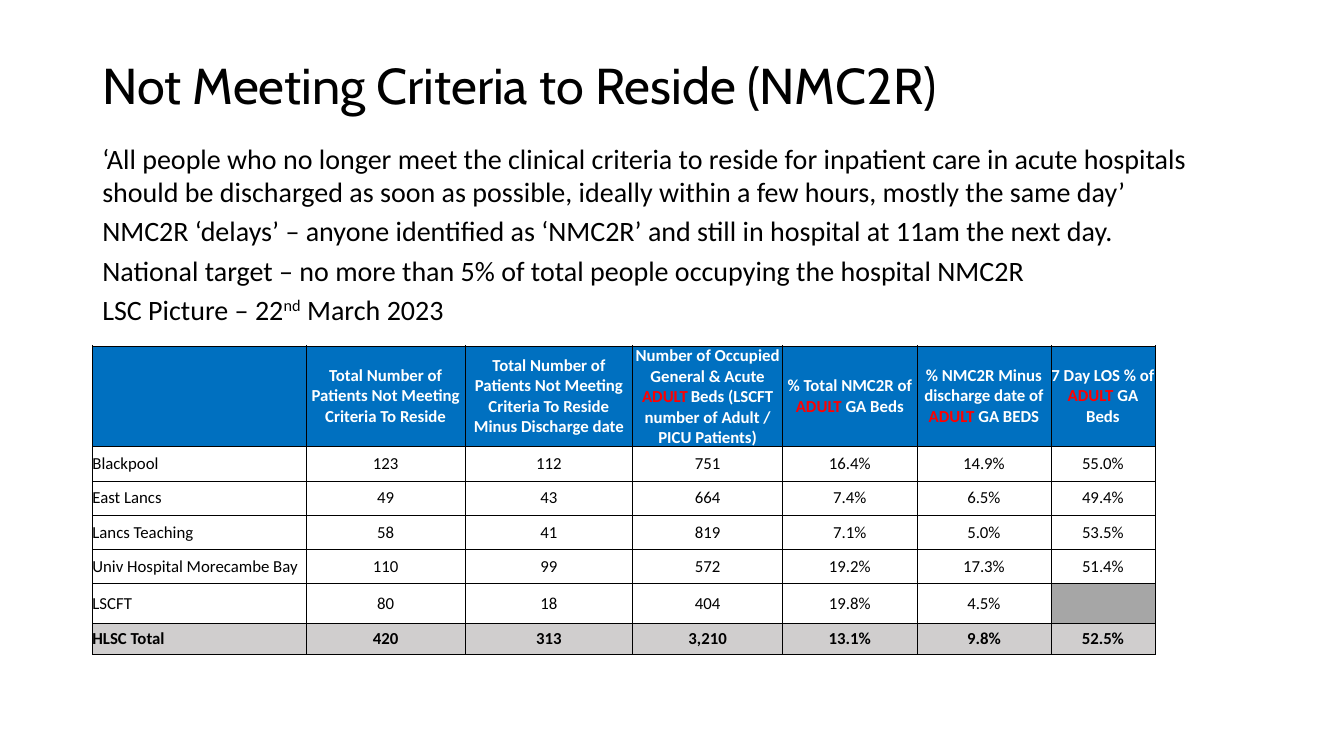
from lxml.etree import SubElement
from pptx import Presentation
from pptx.dml.color import RGBColor
from pptx.enum.text import MSO_ANCHOR, PP_ALIGN
from pptx.oxml import parse_xml
from pptx.oxml.ns import nsdecls, qn
from pptx.util import Pt

BLACK, WHITE, RED = "000000", "FFFFFF", "FF0000"
BLUE, LIGHT_GREY, GREY = "0070C0", "D0CECE", "A6A6A6"

TITLE = "Not Meeting Criteria to Reside (NMC2R)"
STATEMENTS = [
    ["‘All people who no longer meet the clinical criteria to reside for inpatient care in acute hospitals "
     "should be discharged as soon as possible, ideally within a few hours, mostly the same day’"],
    ["NMC2R ‘delays’ – anyone identified as ‘NMC2R’ and still in hospital at 11am the next day."],
    ["National target – no more than 5% of total people occupying the hospital NMC2R"],
    ["LSC Picture – 22", "nd", " March 2023"],
]
HEADINGS = [
    [],
    [("Total Number of Patients Not Meeting Criteria To Reside", WHITE, 12)],
    [("Total Number of Patients Not Meeting Criteria To Reside Minus Discharge date", WHITE, 12)],
    [("Number of Occupied General & Acute", WHITE, 12), (" ", RED, 9), ("ADULT", RED, 12), (" ", RED, 9),
     ("Beds (LSCFT number of Adult / PICU Patients)", WHITE, 12)],
    [("% Total NMC2R of ", WHITE, 12), ("ADULT", RED, 12), (" GA Beds", WHITE, 12)],
    [("% NMC2R Minus discharge date of ", WHITE, 12), ("ADULT ", RED, 12), ("GA BEDS", WHITE, 12)],
    [("7 Day LOS % of", WHITE, 12), (" ADULT", RED, 12), (" GA Beds", WHITE, 12)],
]
TRUSTS = [
    ("Blackpool", "123", "112", "751", "16.4%", "14.9%", "55.0%"),
    ("East Lancs", "49", "43", "664", "7.4%", "6.5%", "49.4%"),
    ("Lancs Teaching", "58", "41", "819", "7.1%", "5.0%", "53.5%"),
    ("Univ Hospital Morecambe Bay", "110", "99", "572", "19.2%", "17.3%", "51.4%"),
    ("LSCFT", "80", "18", "404", "19.8%", "4.5%", ""),
    ("HLSC Total", "420", "313", "3,210", "13.1%", "9.8%", "52.5%"),
]
COLUMN_WIDTHS = [152.6, 113.8, 119.5, 107.3, 95.8, 95.8, 74.2]
ROW_HEIGHTS = [62.6, 24.5, 24.5, 24.5, 24.5, 28.1, 22.3]
LEFT = 66


def rgb(value):
    return RGBColor.from_string(value)


def add_span(para, text, size, color=BLACK, bold=False, font="Calibri"):
    span = para.add_run()
    span.text = text
    span.font.name = font
    span.font.size = Pt(size)
    span.font.bold = bold
    span.font.color.rgb = rgb(color)
    return span


def add_text_frame(page, top, height, anchor):
    box = page.shapes.add_textbox(Pt(LEFT), Pt(top), Pt(828), Pt(height))
    frame = box.text_frame
    frame.word_wrap = True
    frame.vertical_anchor = anchor
    return frame


def add_borders(cell):
    properties = cell._tc.get_or_add_tcPr()
    for index, side in enumerate(("lnL", "lnR", "lnT", "lnB")):
        line = parse_xml(f'<a:{side} {nsdecls("a")} w="{Pt(0.5)}"/>')
        fill = SubElement(line, qn("a:solidFill"))
        SubElement(fill, qn("a:srgbClr"), val=BLACK)
        properties.insert(index, line)


def fill_cell(cell, spans, fill, bold, align):
    cell.margin_left = cell.margin_right = cell.margin_top = cell.margin_bottom = 0
    cell.vertical_anchor = MSO_ANCHOR.MIDDLE
    if fill:
        cell.fill.solid()
        cell.fill.fore_color.rgb = rgb(fill)
    else:
        cell.fill.background()
    add_borders(cell)
    para = cell.text_frame.paragraphs[0]
    para.alignment = align
    for text, color, size in spans:
        add_span(para, text, size, color, bold)


def add_trust_table(page):
    rows = [HEADINGS] + [[[(value, BLACK, 12)] if value else [] for value in trust] for trust in TRUSTS]
    table = page.shapes.add_table(len(rows), len(COLUMN_WIDTHS), Pt(LEFT), Pt(247),
                                  Pt(sum(COLUMN_WIDTHS)), Pt(sum(ROW_HEIGHTS))).table
    table.first_row = table.horz_banding = False
    for column, width in zip(table.columns, COLUMN_WIDTHS):
        column.width = Pt(width)
    for row, height in zip(table.rows, ROW_HEIGHTS):
        row.height = Pt(height)
    row_fills = {0: BLUE, len(rows) - 1: LIGHT_GREY}
    for r, row in enumerate(rows):
        for c, spans in enumerate(row):
            fill = row_fills.get(r, None if spans else GREY)
            align = PP_ALIGN.CENTER if r == 0 or c else PP_ALIGN.LEFT
            fill_cell(table.cell(r, c), spans, fill, r in row_fills, align)


def main():
    deck = Presentation()
    deck.slide_width, deck.slide_height = Pt(960), Pt(540)
    page = deck.slides.add_slide(deck.slide_layouts[6])

    title = add_text_frame(page, 28.8, 68.4, MSO_ANCHOR.MIDDLE).paragraphs[0]
    title.line_spacing = 0.9
    add_span(title, TITLE, 36, font="Cabin")

    body = add_text_frame(page, 97.2, 388.8, MSO_ANCHOR.TOP)
    for index, pieces in enumerate(STATEMENTS):
        para = body.add_paragraph() if index else body.paragraphs[0]
        para.space_before = Pt(4 if index else 0)
        for piece in pieces:
            span = add_span(para, piece, 20)
            if piece == "nd":
                span.font._element.set("baseline", "30000")

    add_trust_table(page)
    deck.save("out.pptx")


if __name__ == "__main__":
    main()
